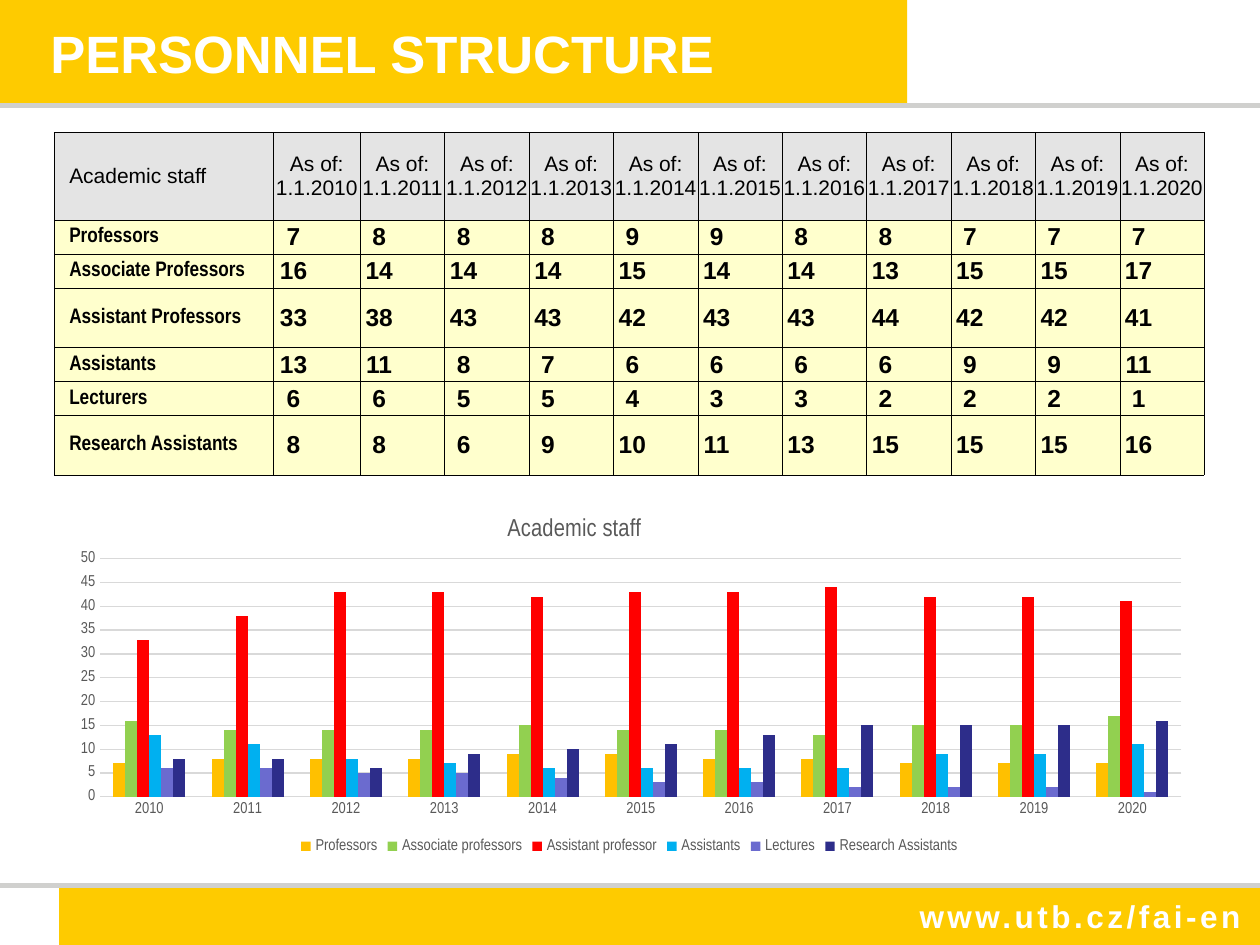
from dataclasses import dataclass

from pptx import Presentation
from pptx.chart.data import CategoryChartData
from pptx.dml.color import RGBColor
from pptx.enum.chart import XL_CHART_TYPE, XL_LEGEND_POSITION, XL_TICK_MARK
from pptx.enum.shapes import MSO_CONNECTOR, MSO_SHAPE
from pptx.enum.text import MSO_ANCHOR, PP_ALIGN
from pptx.oxml import parse_xml
from pptx.oxml.ns import nsdecls, qn
from pptx.oxml.xmlchemy import OxmlElement
from pptx.util import Inches, Pt

COLORS = {
    "yellow": "FECB00",
    "rule": "D0D0CE",
    "white": "FFFFFF",
    "black": "000000",
    "header": "E4E4E4",
    "body": "FFFFCD",
    "chart_text": "595959",
    "grid": "D9D9D9",
}
YEARS = range(2010, 2021)
ROW_HEIGHTS = [0.7, 0.27, 0.27, 0.47, 0.27, 0.27, 0.47]
COLUMN_WIDTHS = [1.74, 0.69] + [0.67] * 10


@dataclass
class StaffGroup:
    label: str
    series: str
    color: str
    counts: list[int]


STAFF = [
    StaffGroup("Professors", "Professors", "FFC000", [7, 8, 8, 8, 9, 9, 8, 8, 7, 7, 7]),
    StaffGroup("Associate Professors", "Associate professors", "92D050",
               [16, 14, 14, 14, 15, 14, 14, 13, 15, 15, 17]),
    StaffGroup("Assistant Professors", "Assistant professor", "FF0000",
               [33, 38, 43, 43, 42, 43, 43, 44, 42, 42, 41]),
    StaffGroup("Assistants", "Assistants", "00B0F0", [13, 11, 8, 7, 6, 6, 6, 6, 9, 9, 11]),
    StaffGroup("Lecturers", "Lectures", "6B6BCF", [6, 6, 5, 5, 4, 3, 3, 2, 2, 2, 1]),
    StaffGroup("Research Assistants", "Research Assistants", "2D2D8A",
               [8, 8, 6, 9, 10, 11, 13, 15, 15, 15, 16]),
]


def rgb(name: str) -> RGBColor:
    return RGBColor.from_string(COLORS[name])


def style_font(font, size: float, color: str, name: str = "Arial", bold: bool = False) -> None:
    font.size = Pt(size)
    font.name = name
    font.bold = bold
    font.color.rgb = rgb(color)


def add_band(slide, left: float, top: float, width: float, height: float) -> None:
    shape = slide.shapes.add_shape(
        MSO_SHAPE.RECTANGLE, Inches(left), Inches(top), Inches(width), Inches(height))
    shape.shadow.inherit = False
    shape.fill.solid()
    shape.fill.fore_color.rgb = rgb("yellow")
    shape.line.fill.background()


def add_rule(slide, top: float) -> None:
    connector = slide.shapes.add_connector(
        MSO_CONNECTOR.STRAIGHT, 0, Inches(top), Inches(10), Inches(top))
    connector.line.color.rgb = rgb("rule")
    connector.line.width = Pt(3)
    connector._element.spPr.append(OxmlElement("a:effectLst"))


def add_title(slide) -> None:
    title = slide.shapes.title
    title.left, title.top, title.width, title.height = 0, 0, Inches(7.19), Inches(0.84)
    title.element.getparent().append(title.element)
    frame = title.text_frame
    frame.text = "PERSONNEL STRUCTURE"
    frame.margin_left = Inches(0.4)
    frame.vertical_anchor = MSO_ANCHOR.MIDDLE
    paragraph = frame.paragraphs[0]
    paragraph.alignment = PP_ALIGN.LEFT
    style_font(paragraph.runs[0].font, 30, "white", bold=True)


def add_web_address(slide) -> None:
    box = slide.shapes.add_textbox(Inches(7.2), Inches(7.07), Inches(2.8), Inches(0.4))
    frame = box.text_frame
    frame.word_wrap = False
    frame.text = "www.utb.cz/fai-en"
    run = frame.paragraphs[0].runs[0]
    style_font(run.font, 18, "white", bold=True)
    run.font._element.set("spc", "200")


def fill_cell(cell, text: str, fill: str, size: float, name: str, bold: bool,
              centered: bool, left: float = 0, right: float = 0) -> None:
    cell.margin_left, cell.margin_right = Inches(left), Inches(right)
    cell.margin_top = cell.margin_bottom = 0
    cell.vertical_anchor = MSO_ANCHOR.MIDDLE
    cell.text = text
    for paragraph in cell.text_frame.paragraphs:
        paragraph.alignment = PP_ALIGN.CENTER if centered else PP_ALIGN.LEFT
        for run in paragraph.runs:
            style_font(run.font, size, "black", name, bold)
    properties = cell._tc.get_or_add_tcPr()
    for side in ("lnL", "lnR", "lnT", "lnB"):
        properties.append(parse_xml(
            f'<a:{side} {nsdecls("a")} w="3175"><a:solidFill>'
            f'<a:srgbClr val="{COLORS["black"]}"/></a:solidFill></a:{side}>'))
    cell.fill.solid()
    cell.fill.fore_color.rgb = rgb(fill)


def add_staff_table(slide) -> None:
    table = slide.shapes.add_table(
        len(ROW_HEIGHTS), len(COLUMN_WIDTHS),
        Inches(0.43), Inches(1.05), Inches(9.13), Inches(2.7)).table
    table.first_row = table.horz_banding = False
    for column, width in zip(table.columns, COLUMN_WIDTHS):
        column.width = Inches(width)
    for row, height in zip(table.rows, ROW_HEIGHTS):
        row.height = Inches(height)
    fill_cell(table.cell(0, 0), "Academic staff", "header", 12, "Arial", False, False, left=0.12)
    for column, year in enumerate(YEARS, 1):
        fill_cell(table.cell(0, column), f"As of:\n1.1.{year}", "header", 12, "Arial", False, True)
    for row, group in enumerate(STAFF, 1):
        fill_cell(table.cell(row, 0), group.label, "body", 12, "Arial Narrow", True, False, left=0.12)
        for column, count in enumerate(group.counts, 1):
            fill_cell(table.cell(row, column), str(count), "body", 14, "Arial", True, True, right=0.37)


def set_layout(element, position: int, **fractions: float) -> None:
    for layout in element.findall(qn("c:layout")):
        element.remove(layout)
    target = '<c:layoutTarget val="inner"/>' if "w" in fractions else ""
    modes = '<c:xMode val="edge"/><c:yMode val="edge"/>'
    values = "".join(f'<c:{key} val="{value}"/>' for key, value in fractions.items())
    element.insert(position, parse_xml(
        f'<c:layout {nsdecls("c")}><c:manualLayout>{target}{modes}{values}'
        f'</c:manualLayout></c:layout>'))


def add_staff_chart(slide) -> None:
    data = CategoryChartData()
    data.categories = [str(year) for year in YEARS]
    for group in STAFF:
        data.add_series(group.series, group.counts)
    chart = slide.shapes.add_chart(
        XL_CHART_TYPE.COLUMN_CLUSTERED,
        Inches(0.43), Inches(3.91), Inches(9.13), Inches(2.91), data).chart
    style_font(chart.font, 10, "black", "Arial Narrow")

    title = chart.chart_title
    title.text_frame.text = "Academic staff"
    style_font(title.text_frame.paragraphs[0].runs[0].font, 14, "chart_text", "Arial Narrow")
    set_layout(title._element, 1, x=0.39, y=0.05)
    set_layout(chart._chartSpace.chart.plotArea, 0, x=0.04, y=0.18, w=0.94, h=0.65)

    plot = chart.plots[0]
    plot.gap_width = 219
    plot.overlap = 0
    plot.vary_by_categories = False
    for series, group in zip(plot.series, STAFF):
        series.format.fill.solid()
        series.format.fill.fore_color.rgb = RGBColor.from_string(group.color)

    category_axis, value_axis = chart.category_axis, chart.value_axis
    for axis in (category_axis, value_axis):
        axis.major_tick_mark = axis.minor_tick_mark = XL_TICK_MARK.NONE
        style_font(axis.tick_labels.font, 9, "chart_text", "Arial Narrow")
    value_axis.minimum_scale, value_axis.maximum_scale, value_axis.major_unit = 0, 50, 5
    value_axis.format.line.fill.background()
    for line in (category_axis.format.line, value_axis.major_gridlines.format.line):
        line.color.rgb = rgb("grid")
        line.width = Pt(0.75)

    chart.has_legend = True
    chart.legend.position = XL_LEGEND_POSITION.BOTTOM
    chart.legend.include_in_layout = False
    style_font(chart.legend.font, 9, "chart_text", "Arial Narrow")


def main() -> None:
    """Build the personnel structure slide."""
    presentation = Presentation()
    presentation.slide_width, presentation.slide_height = Inches(10), Inches(7.5)
    slide = presentation.slides.add_slide(presentation.slide_layouts[5])
    add_band(slide, 0, 0, 7.2, 0.84)
    add_band(slide, 0.47, 7.04, 9.53, 0.46)
    for top in (0.84, 7.03):
        add_rule(slide, top)
    add_web_address(slide)
    add_title(slide)
    add_staff_table(slide)
    add_staff_chart(slide)
    presentation.save("out.pptx")


if __name__ == "__main__":
    main()
